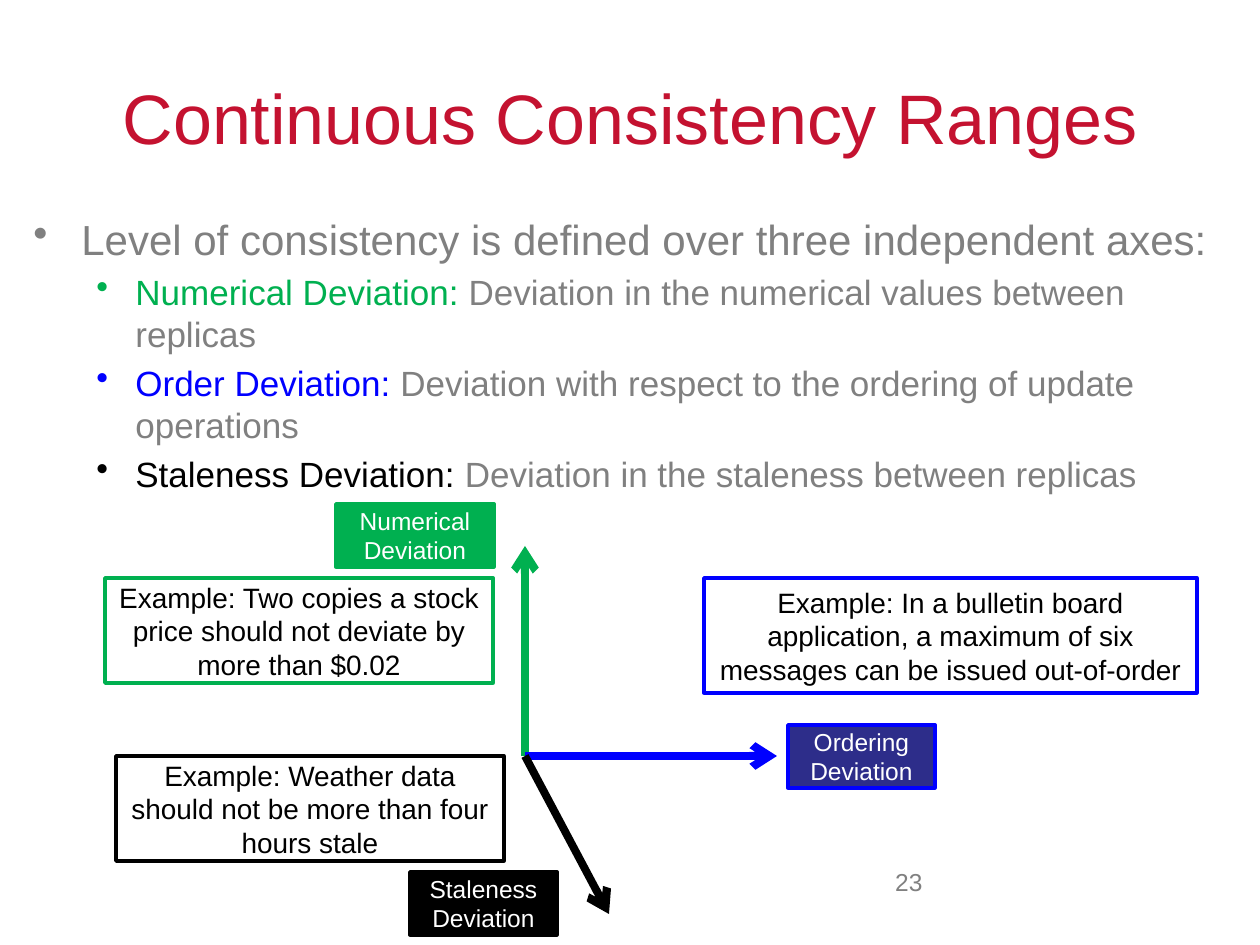
from typing import NamedTuple

import pptx
import pptx.dml.color
import pptx.enum.shapes
import pptx.enum.text
import pptx.oxml.ns
import pptx.util
from lxml import etree

EMU_PER_PX = 914400 / 126
FONT = "Arial"
COLORS = {
    "title": "C41230",
    "gray": "808080",
    "green": "00B050",
    "blue": "0000FF",
    "navy": "2D2D8A",
    "black": "000000",
    "white": "FFFFFF",
}
ALIGN = pptx.enum.text.PP_ALIGN
ANCHOR = pptx.enum.text.MSO_ANCHOR


class Box(NamedTuple):
    left: int
    top: int
    width: int
    height: int


class Run(NamedTuple):
    text: str
    color: str


class Bullet(NamedTuple):
    runs: list[Run]
    size: int
    level: int
    margin: int
    hang: int


class Axis(NamedTuple):
    start: tuple[int, int]
    end: tuple[int, int]
    color: str


class Panel(NamedTuple):
    box: Box
    lines: list[str]
    size: int
    fill: str
    line: str
    text: str


BULLETS = [
    Bullet([Run("Level of consistency is defined over three independent axes:", "gray")], 24, 0, 48, 48),
] + [
    Bullet([Run(term, color), Run(meaning, "gray")], 20, 1, 102, 39)
    for term, meaning, color in [
        ("Numerical Deviation:", " Deviation in the numerical values between replicas", "green"),
        ("Order Deviation:", " Deviation with respect to the ordering of update operations", "blue"),
        ("Staleness Deviation:", " Deviation in the staleness between replicas", "black"),
    ]
]

ORIGIN = (525, 756)
AXES = [
    Axis(ORIGIN, (525, 546), "green"),
    Axis(ORIGIN, (777, 756), "blue"),
    Axis(ORIGIN, (609, 914), "black"),
]

PANELS = [
    Panel(Box(336, 504, 158, 63), ["Numerical Deviation"], 14, "green", "green", "white"),
    Panel(Box(410, 872, 147, 63), ["Staleness", "Deviation"], 14, "black", "black", "white"),
    Panel(Box(788, 725, 147, 63), ["Ordering Deviation"], 14, "navy", "blue", "white"),
    Panel(Box(105, 578, 388, 105),
          ["Example: Two copies a stock price should not deviate by more than $0.02"],
          16, "white", "green", "black"),
    Panel(Box(116, 756, 388, 105),
          ["Example: Weather data should not be more than four hours stale"],
          16, "white", "black", "black"),
    Panel(Box(704, 578, 493, 115),
          ["Example: In a bulletin board application, a maximum of six messages "
           "can be issued out-of-order"],
          16, "white", "blue", "black"),
]


def px(value: int) -> pptx.util.Emu:
    return pptx.util.Emu(round(value * EMU_PER_PX))


def rgb(name: str) -> pptx.dml.color.RGBColor:
    return pptx.dml.color.RGBColor.from_string(COLORS[name])


def add_run(p, run: Run, size: int) -> None:
    r = p.add_run()
    r.text = run.text
    r.font.name = FONT
    r.font.size = pptx.util.Pt(size)
    r.font.color.rgb = rgb(run.color)


def add_text_box(s, box: Box, anchor=ANCHOR.TOP):
    tf = s.shapes.add_textbox(*map(px, box)).text_frame
    tf.word_wrap = True
    tf.vertical_anchor = anchor
    return tf


def add_label(s, box: Box, run: Run, size: int, align, anchor=ANCHOR.TOP) -> None:
    p = add_text_box(s, box, anchor).paragraphs[0]
    p.alignment = align
    add_run(p, run, size)


def add_bullets(s, box: Box, bullets: list[Bullet]) -> None:
    tf = add_text_box(s, box)
    tf.margin_top = px(14)
    for i, bullet in enumerate(bullets):
        p = tf.add_paragraph() if i else tf.paragraphs[0]
        p.level = bullet.level
        p.space_before = pptx.util.Pt(4 if i else 0)
        pPr = p._p.get_or_add_pPr()
        pPr.set("marL", str(px(bullet.margin)))
        pPr.set("indent", str(-px(bullet.hang)))
        etree.SubElement(pPr, pptx.oxml.ns.qn("a:buChar"), char="•")
        for run in bullet.runs:
            add_run(p, run, bullet.size)


def add_axis(s, axis: Axis) -> None:
    straight = pptx.enum.shapes.MSO_CONNECTOR.STRAIGHT
    sp = s.shapes.add_connector(straight, *map(px, axis.start + axis.end))
    sp.line.color.rgb = rgb(axis.color)
    sp.line.width = pptx.util.Pt(4.5)
    etree.SubElement(sp.line._get_or_add_ln(), pptx.oxml.ns.qn("a:tailEnd"), type="arrow")
    etree.SubElement(sp._element.spPr, pptx.oxml.ns.qn("a:effectLst"))


def add_panel(s, panel: Panel) -> None:
    sp = s.shapes.add_shape(pptx.enum.shapes.MSO_SHAPE.RECTANGLE, *map(px, panel.box))
    sp.shadow.inherit = False
    sp.fill.solid()
    sp.fill.fore_color.rgb = rgb(panel.fill)
    sp.line.color.rgb = rgb(panel.line)
    sp.line.width = pptx.util.Pt(2)
    tf = sp.text_frame
    tf.word_wrap = True
    tf.vertical_anchor = ANCHOR.MIDDLE
    for i, line in enumerate(panel.lines):
        p = tf.add_paragraph() if i else tf.paragraphs[0]
        p.alignment = ALIGN.CENTER
        add_run(p, Run(line, panel.text), panel.size)


def main() -> None:
    prs = pptx.Presentation()
    prs.slide_width, prs.slide_height = px(1260), px(945)
    s = prs.slides.add_slide(prs.slide_layouts[6])
    add_label(s, Box(63, 38, 1134, 158), Run("Continuous Consistency Ranges", "title"),
              40, ALIGN.CENTER, ANCHOR.MIDDLE)
    add_label(s, Box(819, 861, 116, 66), Run("23", "gray"), 14, ALIGN.RIGHT)
    add_bullets(s, Box(21, 199, 1218, 624), BULLETS)
    for axis in AXES:
        add_axis(s, axis)
    for panel in PANELS:
        add_panel(s, panel)
    prs.save("out.pptx")


if __name__ == "__main__":
    main()
